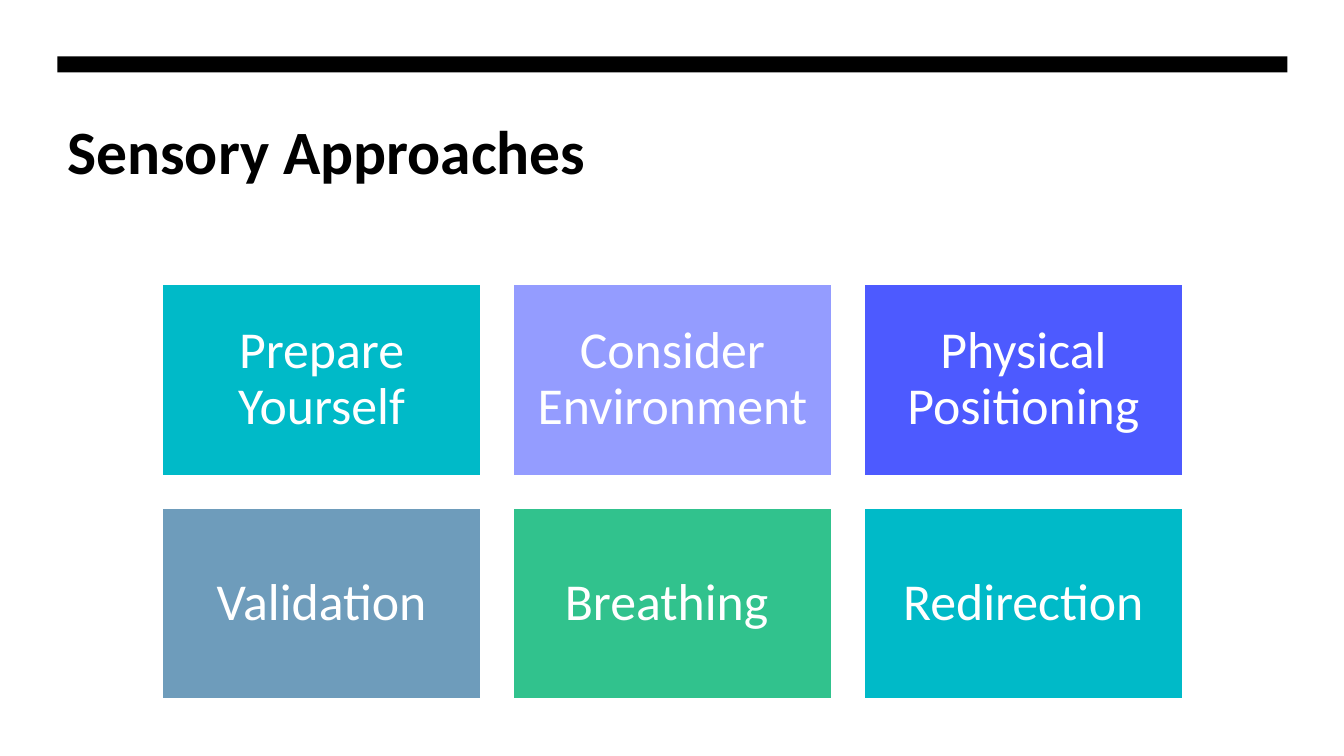
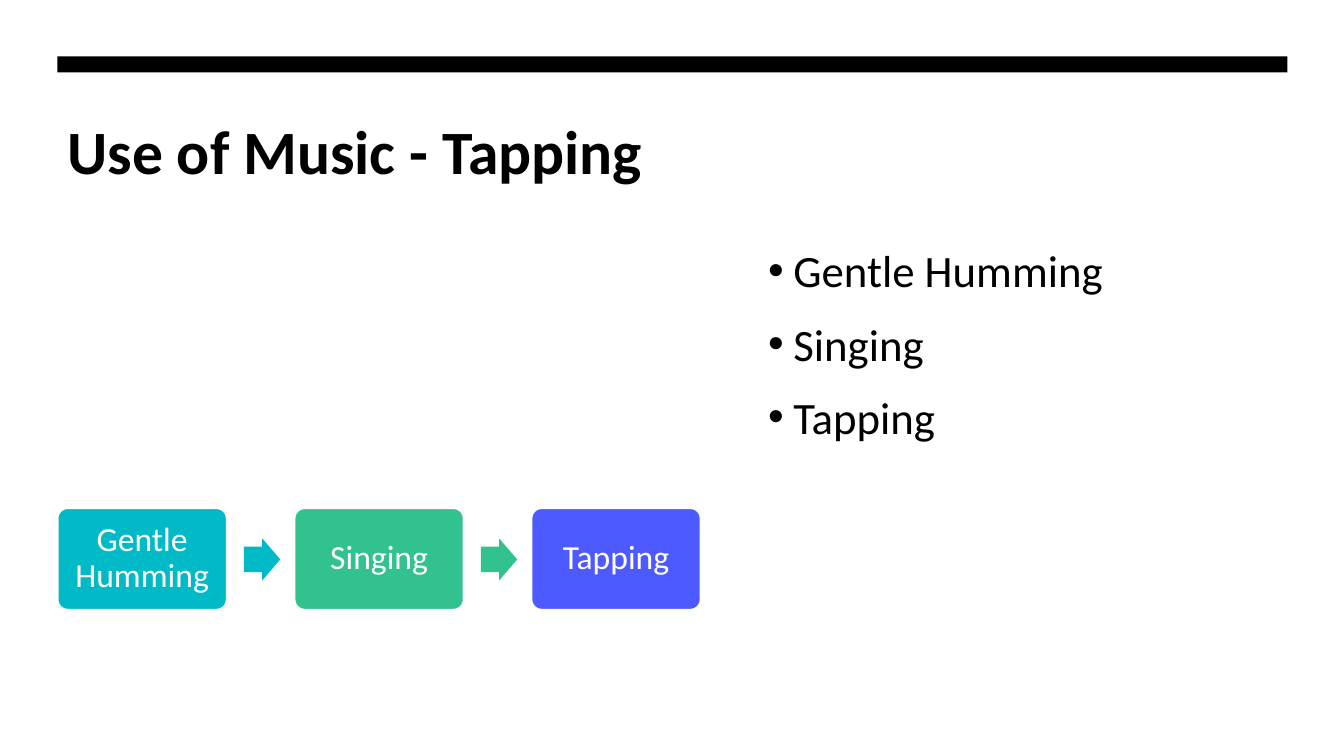
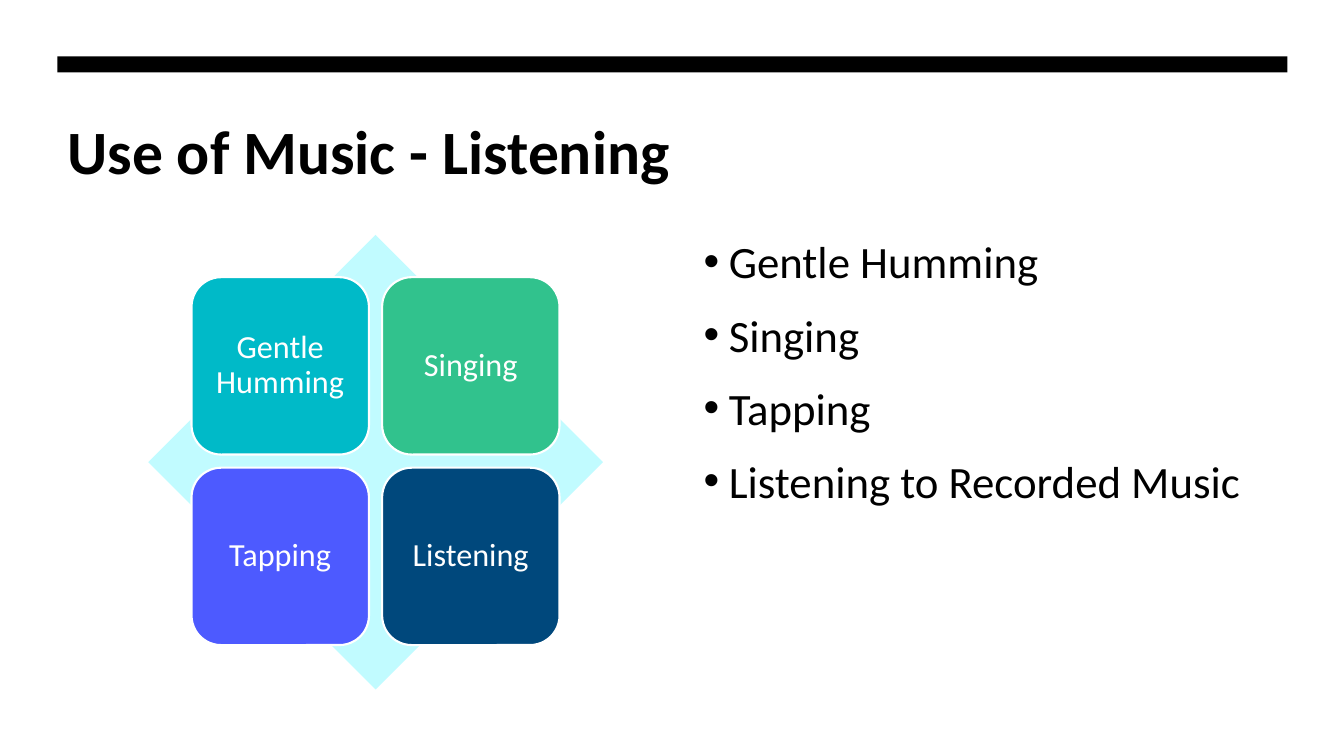
from dataclasses import dataclass

from lxml import etree
from pptx import Presentation
from pptx.dml.color import RGBColor
from pptx.enum.shapes import MSO_SHAPE
from pptx.enum.text import MSO_ANCHOR, PP_ALIGN
from pptx.oxml.ns import qn
from pptx.util import Pt

RECT = MSO_SHAPE.RECTANGLE
ROUNDED = MSO_SHAPE.ROUNDED_RECTANGLE
DIAMOND = MSO_SHAPE.DIAMOND
ARROW = MSO_SHAPE.RIGHT_ARROW
MIDDLE = MSO_ANCHOR.MIDDLE
CENTER = PP_ALIGN.CENTER

EMU_PER_PX = 9144
SLIDE_W, SLIDE_H = 1333, 750
MARGIN, CONTENT_W = 57, 1220


@dataclass(frozen=True)
class Theme:
    font: str = "Calibri"
    black: str = "000000"
    white: str = "FFFFFF"
    teal: str = "00BAC8"
    lilac: str = "949CFF"
    indigo: str = "4D5AFF"
    steel: str = "6E9CBB"
    green: str = "31C28D"
    navy: str = "00487C"
    pale: str = "C1FBFF"
    title_size: int = 44
    tile_size: int = 37
    bullet_size: int = 32
    step_size: int = 24
    quadrant_size: int = 23
    outline: float = 1.5


THEME = Theme()


def px(length):
    return length * EMU_PER_PX


def rgb(color):
    return RGBColor.from_string(color)


def style_font(paragraph, size, color, bold=False):
    font = paragraph.font
    font.name = THEME.font
    font.size = Pt(size)
    font.bold = bold
    font.color.rgb = rgb(color)


def add_block(slide, preset, box, fill, adjustments=()):
    """Add a filled shape with neither outline nor shadow."""
    block = slide.shapes.add_shape(preset, *map(px, box))
    block.shadow.inherit = False
    block.fill.solid()
    block.fill.fore_color.rgb = rgb(fill)
    block.line.fill.background()
    for index, value in enumerate(adjustments):
        block.adjustments[index] = value
    return block


def add_card(slide, preset, box, fill, label, size, inset, adjustments=()):
    """Add a white-outlined block with a centred label."""
    card = add_block(slide, preset, box, fill, adjustments)
    card.line.color.rgb = rgb(THEME.white)
    card.line.width = Pt(THEME.outline)
    frame = card.text_frame
    frame.word_wrap = True
    frame.vertical_anchor = MIDDLE
    frame.margin_left = frame.margin_right = px(inset)
    frame.margin_top = frame.margin_bottom = px(inset)
    paragraph = frame.paragraphs[0]
    paragraph.text = label
    paragraph.alignment = CENTER
    paragraph.line_spacing = 0.9
    style_font(paragraph, size, THEME.white)


def add_card_grid(slide, cards, columns, origin, card_size, gap, **card_style):
    left, top = origin
    width, height = card_size
    for index, (label, fill) in enumerate(cards):
        row, column = divmod(index, columns)
        box = (left + column * (width + gap), top + row * (height + gap), width, height)
        add_card(slide, box=box, fill=fill, label=label, **card_style)


def add_text_frame(slide, box):
    frame = slide.shapes.add_textbox(*map(px, box)).text_frame
    frame.word_wrap = True
    return frame


def add_bullets(slide, left, top, items):
    frame = add_text_frame(slide, (left, top, SLIDE_W - left, 72 * len(items)))
    for index, item in enumerate(items):
        paragraph = frame.add_paragraph() if index else frame.paragraphs[0]
        paragraph.text = item
        properties = paragraph._p.get_or_add_pPr()
        properties.set("marL", str(px(25)))
        properties.set("indent", str(px(-25)))
        etree.SubElement(properties, qn("a:buFont")).set("typeface", "Arial")
        etree.SubElement(properties, qn("a:buChar")).set("char", "•")
        paragraph.line_spacing = 1.1
        if index:
            paragraph.space_before = Pt(10)
        style_font(paragraph, THEME.bullet_size, THEME.black)


def add_titled_slide(deck, title):
    slide = deck.slides.add_slide(deck.slide_layouts[6])
    add_block(slide, RECT, (MARGIN, 56, CONTENT_W, 16), THEME.black)
    heading = add_text_frame(slide, (MARGIN, 107, CONTENT_W, 85)).paragraphs[0]
    heading.text = title
    style_font(heading, THEME.title_size, THEME.black, bold=True)
    return slide


def build_approaches(deck):
    slide = add_titled_slide(deck, "Sensory Approaches")
    approaches = [
        ("Prepare Yourself", THEME.teal),
        ("Consider Environment", THEME.lilac),
        ("Physical Positioning", THEME.indigo),
        ("Validation", THEME.steel),
        ("Breathing ", THEME.green),
        ("Redirection", THEME.teal),
    ]
    add_card_grid(slide, approaches, 3, (161, 282), (316, 190), 32,
                  preset=RECT, size=THEME.tile_size, inset=15)


def build_tapping(deck):
    slide = add_titled_slide(deck, "Use of Music - Tapping")
    add_bullets(slide, 752, 231, ["Gentle Humming", "Singing", "Tapping"])
    steps = [
        ("Gentle Humming", THEME.teal),
        ("Singing", THEME.green),
        ("Tapping", THEME.indigo),
    ]
    step_w, gap = 168, 67
    add_card_grid(slide, steps, 3, (MARGIN, 504), (step_w, 101), gap,
                  preset=ROUNDED, size=THEME.step_size, inset=10, adjustments=(0.1,))
    for index, (_, fill) in enumerate(steps[:-1]):
        arrow_left = MARGIN + index * (step_w + gap) + step_w + 17
        add_block(slide, ARROW, (arrow_left, 534, 36, 42), fill, (0.6, 0.5))


def build_listening(deck):
    slide = add_titled_slide(deck, "Use of Music - Listening")
    add_block(slide, DIAMOND, (147, 233, 451, 451), THEME.pale)
    quadrants = [
        ("Gentle Humming", THEME.teal),
        ("Singing", THEME.green),
        ("Tapping", THEME.indigo),
        ("Listening", THEME.navy),
    ]
    add_card_grid(slide, quadrants, 2, (190, 275), (176, 176), 13,
                  preset=ROUNDED, size=THEME.quadrant_size, inset=10)
    add_bullets(slide, 688, 222,
                ["Gentle Humming", "Singing", "Tapping", "Listening to Recorded Music"])


def main():
    deck = Presentation()
    deck.slide_width, deck.slide_height = px(SLIDE_W), px(SLIDE_H)
    build_approaches(deck)
    build_tapping(deck)
    build_listening(deck)
    deck.save("out.pptx")


if __name__ == "__main__":
    main()
